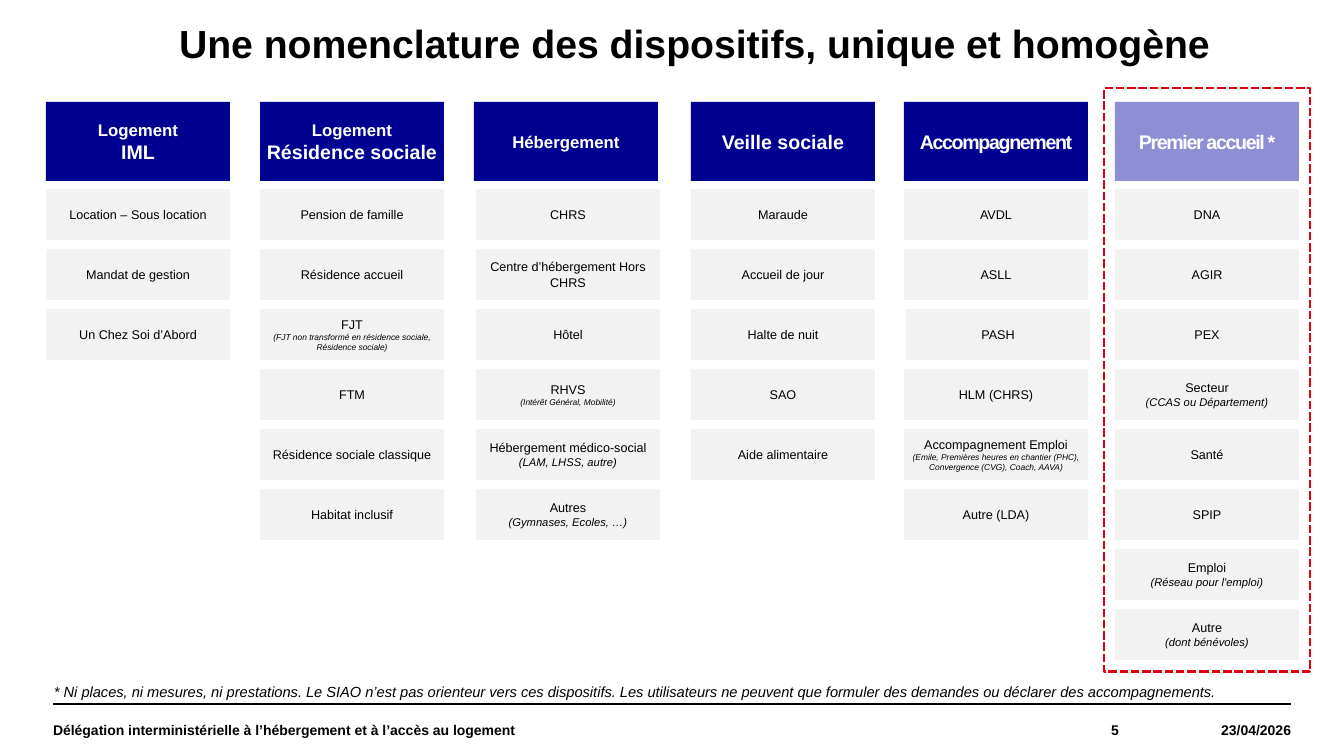
"""Draw the slide listing social housing schemes by family."""
import dataclasses

import lxml.etree
import pptx
import pptx.dml.color
import pptx.enum.dml
import pptx.enum.shapes
import pptx.enum.text
import pptx.oxml.ns
import pptx.util

SCALE = 914400 / 100.8
ALIGN = pptx.enum.text.PP_ALIGN
ANCHOR = pptx.enum.text.MSO_ANCHOR
BLUE, LILAC, GREY = "000091", "8E8ED5", "F2F2F2"
BLACK, WHITE, RED = "000000", "FFFFFF", "E1000F"
WIDTH, HEAD, CELL, PITCH = 184, 79, 51, 60
TOP, FIRST = 102, 189


@dataclasses.dataclass(frozen=True)
class Line:
    text: str
    size: float = 9
    bold: bool = False
    slant: bool = False
    color: str = BLACK
    space: int = 0


@dataclasses.dataclass(frozen=True)
class Box:
    left: int
    top: int
    width: int
    height: int


@dataclasses.dataclass(frozen=True)
class Cell:
    name: str
    note: str = ""
    size: int = 8
    shift: int = 0


@dataclasses.dataclass(frozen=True)
class Column:
    left: int
    head: list[Line]
    cells: list[Cell]
    fill: str = BLUE
    shift: int = 0


@dataclasses.dataclass(frozen=True)
class Label:
    box: Box
    line: Line
    align: ALIGN = ALIGN.LEFT
    anchor: ANCHOR = ANCHOR.MIDDLE
    inset: tuple[int, int] = (0, 0)
    pace: float = 1.0


def title(text: str, size: int = 14, space: int = 0) -> Line:
    """Return a line of a column heading."""
    return Line(text, size, bold=True, color=WHITE, space=space)


COLUMNS = [
    Column(46, [title("Logement", 12), title("IML")], [
        Cell("Location – Sous location"), Cell("Mandat de gestion"),
        Cell("Un Chez Soi d’Abord")]),
    Column(260, [title("Logement", 12), title("Résidence sociale")], [
        Cell("Pension de famille"), Cell("Résidence accueil"),
        Cell("FJT", "(FJT non transformé en résidence sociale, Résidence sociale)", 6),
        Cell("FTM"), Cell("Résidence sociale classique"), Cell("Habitat inclusif")]),
    Column(474, [title("Hébergement", 12)], [
        Cell("CHRS"), Cell("Centre d’hébergement Hors CHRS"), Cell("Hôtel"),
        Cell("RHVS", "(Intérêt Général, Mobilité)", 6),
        Cell("Hébergement médico-social", "(LAM, LHSS, autre)"),
        Cell("Autres", "(Gymnases, Ecoles, …)")], shift=2),
    Column(691, [title("Veille sociale")], [
        Cell("Maraude"), Cell("Accueil de jour"), Cell("Halte de nuit"),
        Cell("SAO"), Cell("Aide alimentaire")]),
    Column(904, [title("Accompagnement", space=-100)], [
        Cell("AVDL"), Cell("ASLL"), Cell("PASH", shift=2), Cell("HLM (CHRS)"),
        Cell("Accompagnement Emploi", "(Emile, Premières heures en chantier (PHC), "
             "Convergence (CVG), Coach, AAVA)", 6),
        Cell("Autre (LDA)")]),
    Column(1115, [title("Premier accueil *", space=-100)], [
        Cell("DNA"), Cell("AGIR"), Cell("PEX"),
        Cell("Secteur", "(CCAS ou Département)"), Cell("Santé"), Cell("SPIP"),
        Cell("Emploi", "(Réseau pour l'emploi)"),
        Cell("Autre", "(dont bénévoles)")], LILAC),
]

LABELS = [
    Label(Box(179, 25, 1111, 42),
          Line("Une nomenclature des dispositifs, unique et homogène", 28, bold=True),
          anchor=ANCHOR.TOP, pace=0.9),
    Label(Box(44, 678, 1260, 28),
          Line("* Ni places, ni mesures, ni prestations. Le SIAO n’est pas orienteur vers "
               "ces dispositifs. Les utilisateurs ne peuvent que formuler des demandes ou "
               "déclarer des accompagnements.", 10.5, slant=True),
          anchor=ANCHOR.TOP, inset=(10, 5)),
    Label(Box(53, 704, 867, 52),
          Line("Délégation interministérielle à l’hébergement et à l’accès au logement",
               10, bold=True)),
    Label(Box(920, 704, 199, 52), Line("5", 10, bold=True), ALIGN.RIGHT),
    Label(Box(1119, 704, 172, 52), Line("23/04/2026", 10, bold=True), ALIGN.RIGHT),
]


def px(count: int) -> pptx.util.Emu:
    """Turn pixels into EMU."""
    return pptx.util.Emu(round(count * SCALE))


def paint(code: str) -> pptx.dml.color.RGBColor:
    """Turn a hex string into a colour."""
    return pptx.dml.color.RGBColor.from_string(code)


def place(box: Box) -> list[pptx.util.Emu]:
    """Return the four lengths of a box in EMU."""
    return [px(part) for part in dataclasses.astuple(box)]


def write(shape, lines: list[Line], align: ALIGN, anchor: ANCHOR,
          inset: tuple[int, int], pace: float = 1.0) -> None:
    """Fill a shape with one paragraph per line."""
    frame = shape.text_frame
    frame.word_wrap = True
    frame.vertical_anchor = anchor
    frame.margin_left = frame.margin_right = px(inset[0])
    frame.margin_top = frame.margin_bottom = px(inset[1])
    for rank, line in enumerate(lines):
        para = frame.add_paragraph() if rank else frame.paragraphs[0]
        para.alignment = align
        para.line_spacing = pace
        run = para.add_run()
        run.text = line.text
        font = run.font
        font.name, font.size = "Arial", pptx.util.Pt(line.size)
        font.bold, font.italic = line.bold, line.slant
        font.color.rgb = paint(line.color)
        if line.space:
            run._r.get_or_add_rPr().set("spc", str(line.space))


def block(slide, box: Box, fill: str, lines: list[Line], side: int) -> None:
    """Draw a filled rectangle with centred text."""
    shape = slide.shapes.add_shape(pptx.enum.shapes.MSO_SHAPE.RECTANGLE, *place(box))
    shape.shadow.inherit = False
    shape.fill.solid()
    shape.fill.fore_color.rgb = paint(fill)
    shape.line.fill.background()
    write(shape, lines, ALIGN.CENTER, ANCHOR.MIDDLE, (side, 5))


def stack(slide, column: Column) -> None:
    """Draw a heading and the cells below it."""
    block(slide, Box(column.left, TOP, WIDTH, HEAD), column.fill, column.head, 0)
    for rank, cell in enumerate(column.cells):
        lines = [Line(cell.name)]
        if cell.note:
            lines.append(Line(cell.note, cell.size, slant=True))
        left = column.left + column.shift + cell.shift
        block(slide, Box(left, FIRST + rank * PITCH, WIDTH, CELL), GREY, lines, 8)


def rule(slide) -> None:
    """Draw the line above the footer."""
    line = slide.shapes.add_connector(
        pptx.enum.shapes.MSO_CONNECTOR.STRAIGHT, px(53), px(704), px(1291), px(704))
    line.line.color.rgb = paint(BLACK)
    line.line.width = pptx.util.Pt(0.8)
    lxml.etree.SubElement(line._element.spPr, pptx.oxml.ns.qn("a:effectLst"))


def fence(slide) -> None:
    """Draw the dashed frame around the last column."""
    shape = slide.shapes.add_shape(
        pptx.enum.shapes.MSO_SHAPE.RECTANGLE, *place(Box(1104, 88, 206, 584)))
    shape.shadow.inherit = False
    shape.fill.background()
    shape.line.color.rgb = paint(RED)
    shape.line.width = pptx.util.Pt(2)
    shape.line.dash_style = pptx.enum.dml.MSO_LINE.SQUARE_DOT


def main() -> None:
    """Build and save the slide."""
    deck = pptx.Presentation()
    deck.slide_width, deck.slide_height = px(1344), px(756)
    slide = deck.slides.add_slide(deck.slide_layouts[6])
    rule(slide)
    for column in COLUMNS:
        stack(slide, column)
    fence(slide)
    for label in LABELS:
        shape = slide.shapes.add_textbox(*place(label.box))
        write(shape, [label.line], label.align, label.anchor, label.inset, label.pace)
    deck.save("out.pptx")


if __name__ == "__main__":
    main()
